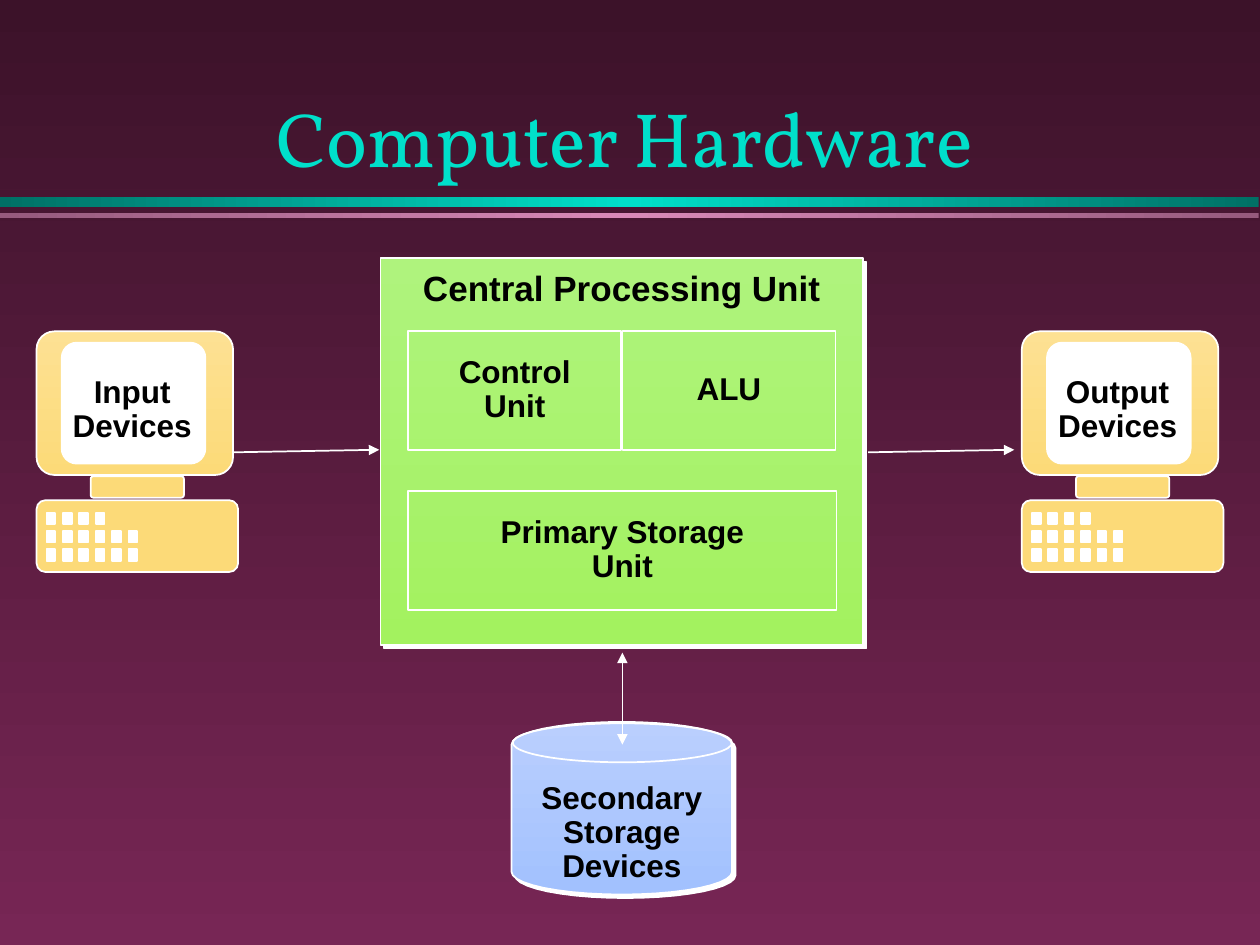
import copy
import math

from lxml import etree
from pptx import Presentation
from pptx import util as u
from pptx.dml.color import RGBColor
from pptx.enum import shapes, text
from pptx.oxml.ns import qn

COLORS = {
    "white": "FFFFFF", "black": "000000", "title": "00DFCA",
    "page": ["3C1229", "772655"],
    "teal band": ["007065", "00DFCA", "007065"],
    "pink band": ["965A7D", "D989B8", "965A7D"],
    "casing": "FCDA78", "monitor": ["FDE193", "FCDA78"],
    "processor": ["AFF37D", "A3F25F"], "disk": ["BACFFE", "A2C1FE"],
}
RECT = shapes.MSO_SHAPE.RECTANGLE
ROUND = shapes.MSO_SHAPE.ROUNDED_RECTANGLE
OVAL = shapes.MSO_SHAPE.OVAL

# Content: positions are left, top, width, height in inches
TITLE = ("Computer Hardware", (0.67, 0.25, 8.58, 1.25))
BANDS = [("teal band", (0, 1.56, 9.99, 0.08)), ("pink band", (0, 1.69, 9.99, 0.04))]
COMPUTERS = [("Input\nDevices", 0.29), ("Output\nDevices", 8.11)]
COMPUTER_PARTS = [  # left is measured from the computer's left edge
    ("casing", (0, 3.97, 1.6, 0.57)),
    ("monitor", (0, 2.63, 1.56, 1.14)),
    ("casing", (0.43, 3.78, 0.74, 0.17)),
    ("white", (0.2, 2.72, 1.14, 0.96)),
]
KEYS_PER_ROW = [4, 6, 6]
PROCESSOR = ("Central Processing Unit", (3.02, 2.05, 3.83, 3.07))
UNITS = [
    ("Control\nUnit", (3.24, 2.63, 1.69, 0.94)),
    ("ALU", (4.94, 2.63, 1.69, 0.94)),
    ("Primary Storage\nUnit", (3.24, 3.9, 3.4, 0.94)),
]
DISK = ("Secondary\nStorage\nDevices", (4.19, 6.16, 1.49, 0.92))
DISK_RIM = (4.07, 5.74, 1.74, 0.31)
ARROWS = [  # start, end, two-headed
    ((1.85, 3.59), (3.01, 3.57), False),
    ((6.89, 3.59), (8.05, 3.57), False),
    ((4.94, 5.18), (4.94, 5.91), True),
]

deck = Presentation()
deck.slide_width, deck.slide_height = u.Inches(10), u.Inches(7.5)
page = deck.slides.add_slide(deck.slide_layouts[6])


def inches(values):
    return [u.Inches(value) for value in values]


def paint(fill, color, angle=270):
    """Fill with nothing, one colour, or a list of evenly spaced gradient colours."""
    if color is None:
        fill.background()
    elif isinstance(color, str):
        fill.solid()
        fill.fore_color.rgb = RGBColor.from_string(color)
    else:
        fill.gradient()
        fill.gradient_angle = angle
        first = fill.gradient_stops[0]._gs
        for _ in color[2:]:
            first.addnext(copy.deepcopy(first))
        for index, (stop, tone) in enumerate(zip(fill.gradient_stops, color)):
            stop.color.rgb = RGBColor.from_string(tone)
            stop.position = index / (len(color) - 1)


def outline(line):
    line.color.rgb = RGBColor.from_string(COLORS["white"])
    line.width = u.Pt(1)


def style(shape, color):
    shape.shadow.inherit = False
    paint(shape.fill, color)
    outline(shape.line)


def add_block(kind, place, color=None):
    shape = page.shapes.add_shape(kind, *inches(place))
    style(shape, color)
    if kind == ROUND:
        shape.adjustments[0] = 0.125
    return shape


def add_hard_shadow(shape):
    effects = shape._element.spPr.find(qn("a:effectLst"))
    shadow = etree.SubElement(effects, qn("a:outerShdw"), dist=str(u.Pt(2.8)),
                              dir="2700000", algn="ctr", rotWithShape="0")
    etree.SubElement(shadow, qn("a:srgbClr"), val=COLORS["white"])


def write(shape, words, size=18, color="black", font="Arial", bold=True,
          anchor=text.MSO_ANCHOR.MIDDLE, spacing=0.9):
    frame = shape.text_frame
    frame.text = words
    frame.word_wrap = False
    frame.vertical_anchor = anchor
    for para in frame.paragraphs:
        para.alignment = text.PP_ALIGN.CENTER
        para.line_spacing = spacing
        for span in para.runs:
            span.font.name, span.font.size, span.font.bold = font, u.Pt(size), bold
            span.font.color.rgb = RGBColor.from_string(COLORS[color])


def add_label(words, place, **options):
    write(page.shapes.add_textbox(*inches(place)), words, **options)


# Background, bands and title
paint(page.background.fill, COLORS["page"])
for name, place in BANDS:
    band = add_block(RECT, place)
    paint(band.fill, COLORS[name], angle=0)
    band.line.fill.background()
add_label(*TITLE, size=44, color="title", font="Vollkorn", bold=False,
          anchor=text.MSO_ANCHOR.BOTTOM, spacing=1.0)

# Input and output computers
for words, left in COMPUTERS:
    for name, (x, *rest) in COMPUTER_PARTS:
        add_block(ROUND, (left + x, *rest), COLORS[name])
    for row, count in enumerate(KEYS_PER_ROW):
        for column in range(count):
            add_block(RECT, (left + 0.08 + 0.13 * column, 4.07 + 0.145 * row, 0.07, 0.09),
                      COLORS["white"])

# Processor and its units
words, place = PROCESSOR
processor = add_block(RECT, place, COLORS["processor"])
add_hard_shadow(processor)
write(processor, words, size=20, anchor=text.MSO_ANCHOR.TOP)
processor.text_frame.margin_top = u.Inches(0.1)

# Disk: lower half-ellipse, then upper half-ellipse
points = []
for step in range(42):
    turn = math.pi * (step if step < 21 else step - 1) / 20
    middle = 6.92 if step < 21 else 5.91
    points.append(inches((4.935 + 0.875 * math.cos(turn), middle + 0.18 * math.sin(turn))))
builder = page.shapes.build_freeform(*points[0])
builder.add_line_segments(points[1:], close=True)
disk = builder.convert_to_shape()
style(disk, COLORS["disk"])
add_hard_shadow(disk)
add_block(OVAL, DISK_RIM)
add_label(*DISK, anchor=text.MSO_ANCHOR.TOP)

for words, place in UNITS:
    write(add_block(RECT, place), words)

# Arrows
for start, end, two_headed in ARROWS:
    arrow = page.shapes.add_connector(shapes.MSO_CONNECTOR.STRAIGHT, *inches(start + end))
    outline(arrow.line)
    line = arrow.line._get_or_add_ln()
    for tag in ["a:headEnd", "a:tailEnd"] if two_headed else ["a:tailEnd"]:
        etree.SubElement(line, qn(tag), type="triangle")
    etree.SubElement(arrow._element.spPr, qn("a:effectLst"))

# Screen labels
for words, left in COMPUTERS:
    add_label(words, (left + 0.18, 2.94, 1.16, 0.65), anchor=text.MSO_ANCHOR.TOP)

deck.save("out.pptx")
